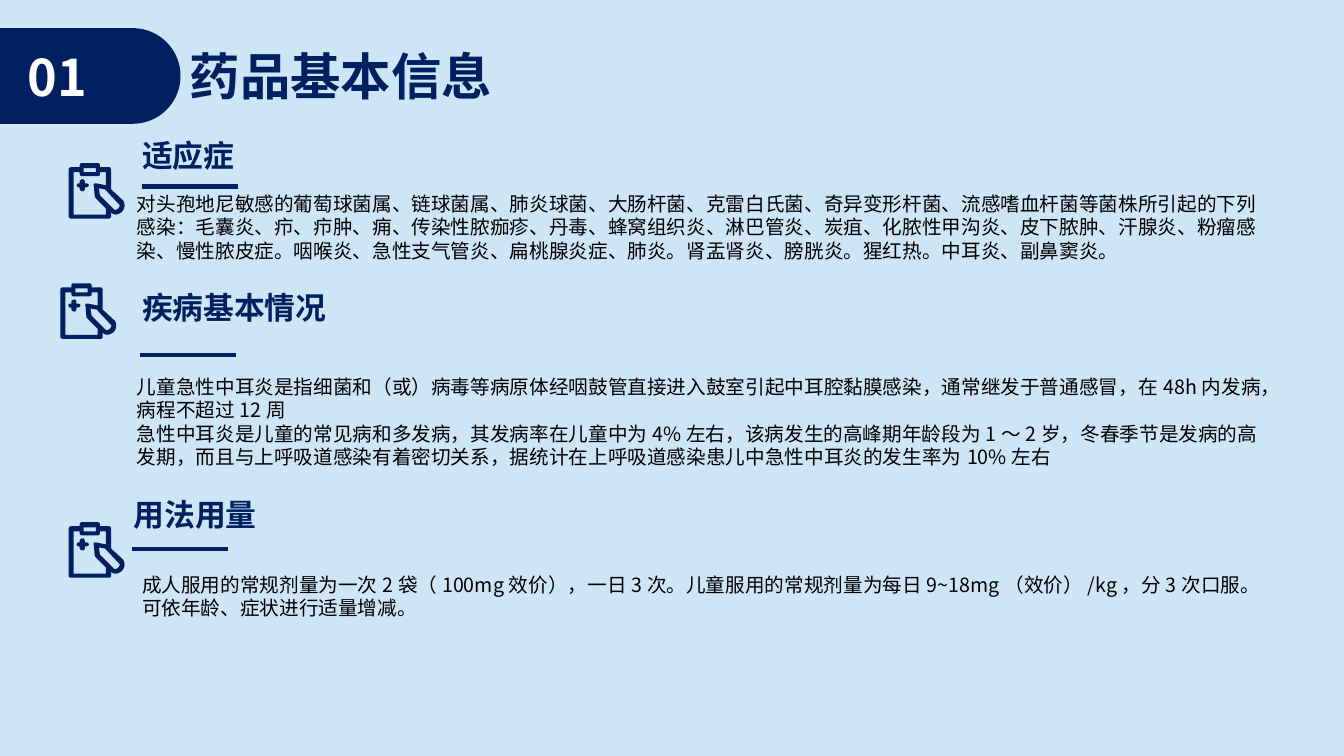
from lxml import etree
from pptx import Presentation
from pptx.dml.color import RGBColor
from pptx.enum.shapes import MSO_CONNECTOR, MSO_SHAPE
from pptx.enum.text import MSO_ANCHOR, MSO_AUTO_SIZE, PP_ALIGN
from pptx.oxml.ns import qn
from pptx.util import Cm, Pt

ROUNDED = MSO_SHAPE.ROUNDED_RECTANGLE
STRAIGHT = MSO_CONNECTOR.STRAIGHT
MIDDLE = MSO_ANCHOR.MIDDLE
GROW = MSO_AUTO_SIZE.SHAPE_TO_FIT_TEXT
CENTER = PP_ALIGN.CENTER

FONT = "Noto Sans CJK SC"
COLORS = {"background": "CEE5F6", "navy": "002060", "white": "FFFFFF", "black": "000000"}
FORMATS = {
    "number": {"size": Pt(36), "bold": True, "color": "white"},
    "title": {"size": Pt(36), "bold": True, "color": "navy"},
    "heading": {"size": Pt(22), "bold": True, "color": "navy"},
    "body": {"size": Pt(14), "bold": False, "color": "black"},
}

ICON_SIDE = 1.4
ICON_UNITS = 55
ICON_DETAIL = 100
CURVE_STEPS = 6
CLIPBOARD = [
    [(30, 25), (31, 32), (45, 46), (46, 47, 48, 46, 49, 45), (51, 43, 51, 41, 50, 41), (36, 26)],
    [(14, 16), (15, 16, 16, 17, 16, 18), (16, 20), (17, 20), (19, 20, 20, 21, 20, 22),
     (20, 23, 19, 24, 17, 24), (16, 24), (16, 26), (16, 27, 15, 28, 14, 28),
     (13, 28, 11, 27, 11, 26), (11, 24), (10, 24), (9, 24, 8, 23, 8, 22),
     (8, 21, 9, 20, 10, 20), (11, 20), (11, 18), (11, 17, 13, 16, 14, 16)],
    [(5, 9), (5, 51), (37, 51), (37, 45), (27, 35), (27, 34, 26, 34, 26, 34), (25, 23),
     (24, 20, 26, 20, 27, 20), (37, 22), (37, 9), (31, 9), (31, 11),
     (31, 12, 30, 13, 29, 13), (13, 13), (12, 13, 11, 12, 11, 11), (11, 9)],
    [(15, 5), (15, 9), (27, 9), (27, 5)],
    [(13, 0), (29, 0), (30, 0, 31, 1, 31, 2), (31, 4), (40, 4), (41, 4, 42, 5, 42, 7),
     (42, 26), (54, 37), (56, 40, 56, 45, 53, 48), (51, 50, 46, 53, 42, 49), (42, 53),
     (42, 54, 41, 55, 40, 55), (3, 55), (1, 55, 0, 54, 0, 53), (0, 7),
     (0, 5, 1, 4, 3, 4), (11, 4), (11, 2), (11, 1, 12, 0, 13, 0)],
]

SECTIONS = [
    {
        "box": (1.5, 3.33, 30.81, 3.43),
        "icon": (0.23, 0.78), "heading": (1.83, 0), "rule": (2.08, 1.37), "body": (1.7, 1.37),
        "heading_width": 2.87,
        "title": "适应症",
        "paragraphs": [
            "对头孢地尼敏感的葡萄球菌属、链球菌属、肺炎球菌、大肠杆菌、克雷白氏菌、奇异变形杆菌、流感嗜血杆菌等菌株所引起的下列感染：毛囊炎、疖、疖肿、痈、传染性脓痂疹、丹毒、蜂窝组织炎、淋巴管炎、炭疽、化脓性甲沟炎、皮下脓肿、汗腺炎、粉瘤感染、慢性脓皮症。咽喉炎、急性支气管炎、扁桃腺炎症、肺炎。肾盂肾炎、膀胱炎。猩红热。中耳炎、副鼻窦炎。",
        ],
    },
    {
        "box": (1.5, 7.14, 30.81, 4.82),
        "icon": (0.02, 0), "heading": (1.83, 0), "rule": (2.03, 1.8), "body": (1.7, 2.18),
        "heading_width": 5.23,
        "title": "疾病基本情况",
        "paragraphs": [
            "儿童急性中耳炎是指细菌和（或）病毒等病原体经咽鼓管直接进入鼓室引起中耳腔黏膜感染，通常继发于普通感冒，在48h内发病，病程不超过12周",
            "急性中耳炎是儿童的常见病和多发病，其发病率在儿童中为4%左右，该病发生的高峰期年龄段为1～2岁，冬春季节是发病的高发期，而且与上呼吸道感染有着密切关系，据统计在上呼吸道感染患儿中急性中耳炎的发生率为10%左右",
        ],
    },
    {
        "box": (1.5, 12.37, 30.74, 3.38),
        "icon": (0.23, 0.79), "heading": (1.62, 0), "rule": (1.83, 1.47), "body": (1.83, 1.93),
        "heading_width": 3.66,
        "title": "用法用量",
        "paragraphs": [
            "成人服用的常规剂量为一次2袋（100mg效价），一日3次。儿童服用的常规剂量为每日9~18mg（效价）/kg，分3次口服。可依年龄、症状进行适量增减。",
        ],
    },
]


def color(name):
    return RGBColor.from_string(COLORS[name])


def paint(shape):
    shape.shadow.inherit = False
    shape.fill.solid()
    shape.fill.fore_color.rgb = color("navy")
    shape.line.fill.background()


def write(frame, paragraphs, style):
    for index, text in enumerate(paragraphs):
        paragraph = frame.paragraphs[0] if index == 0 else frame.add_paragraph()
        run = paragraph.add_run()
        run.text = text
        for name, value in FORMATS[style].items():
            if name == "color":
                run.font.color.rgb = color(value)
            else:
                setattr(run.font, name, value)
        run.font.name = FONT
        etree.SubElement(run.font._element, qn("a:ea"), typeface=FONT)


def add_text(slide, box, paragraphs, style, wrap=False):
    frame = slide.shapes.add_textbox(*map(Cm, box)).text_frame
    frame.word_wrap = wrap
    frame.auto_size = GROW
    write(frame, paragraphs, style)


def flatten(contour):
    points = [contour[0]]
    for step in contour[1:]:
        if len(step) == 2:
            points.append(step)
            continue
        controls = [points[-1], step[:2], step[2:4], step[4:]]
        for index in range(1, CURVE_STEPS + 1):
            t = index / CURVE_STEPS
            weights = ((1 - t) ** 3, 3 * t * (1 - t) ** 2, 3 * t * t * (1 - t), t ** 3)
            points.append(tuple(
                sum(weight * control[axis] for weight, control in zip(weights, controls))
                for axis in (0, 1)
            ))
    return [(x * ICON_DETAIL, y * ICON_DETAIL) for x, y in points]


def add_clipboard(slide, left, top):
    outlines = [flatten(contour) for contour in CLIPBOARD]
    scale = Cm(ICON_SIDE) / (ICON_UNITS * ICON_DETAIL)
    builder = slide.shapes.build_freeform(*outlines[0][0], scale=scale)
    for index, points in enumerate(outlines):
        if index:
            builder.move_to(*points[0])
        builder.add_line_segments(points[1:], close=True)
    paint(builder.convert_to_shape(Cm(left), Cm(top)))


def add_rule(slide, left, top, width):
    rule = slide.shapes.add_connector(STRAIGHT, Cm(left), Cm(top), Cm(left + width), Cm(top))
    rule.line.color.rgb = color("navy")
    rule.line.width = Pt(3)
    etree.SubElement(rule._element.spPr, qn("a:effectLst"))


def add_header(slide, box, number, title):
    left, top, width, height = box
    tab = slide.shapes.add_shape(ROUNDED, *map(Cm, box))
    tab.adjustments[0] = 0.5
    paint(tab)
    tab.text_frame.vertical_anchor = MIDDLE
    write(tab.text_frame, [number], "number")
    tab.text_frame.paragraphs[0].alignment = CENTER
    add_text(slide, (left + width - 0.02, top + 0.31, 8.23, 1.8), [title], "title")


def add_section(slide, section):
    left, top, width, height = section["box"]
    places = {
        name: (left + section[name][0], top + section[name][1])
        for name in ("icon", "heading", "rule", "body")
    }
    body_left, body_top = section["body"]
    add_clipboard(slide, *places["icon"])
    add_text(slide, (*places["heading"], section["heading_width"], 1.19),
             [section["title"]], "heading")
    add_rule(slide, *places["rule"], 2.41)
    add_text(slide, (*places["body"], width - body_left, height - body_top),
             section["paragraphs"], "body", wrap=True)


def main():
    presentation = Presentation()
    presentation.slide_width = Cm(33.87)
    presentation.slide_height = Cm(19.05)
    slide = presentation.slides.add_slide(presentation.slide_layouts[6])
    slide.background.fill.solid()
    slide.background.fill.fore_color.rgb = color("background")
    add_header(slide, (-1.65, 0.71, 6.2, 2.41), "01", "药品基本信息")
    for section in SECTIONS:
        add_section(slide, section)
    presentation.save("out.pptx")


if __name__ == "__main__":
    main()
